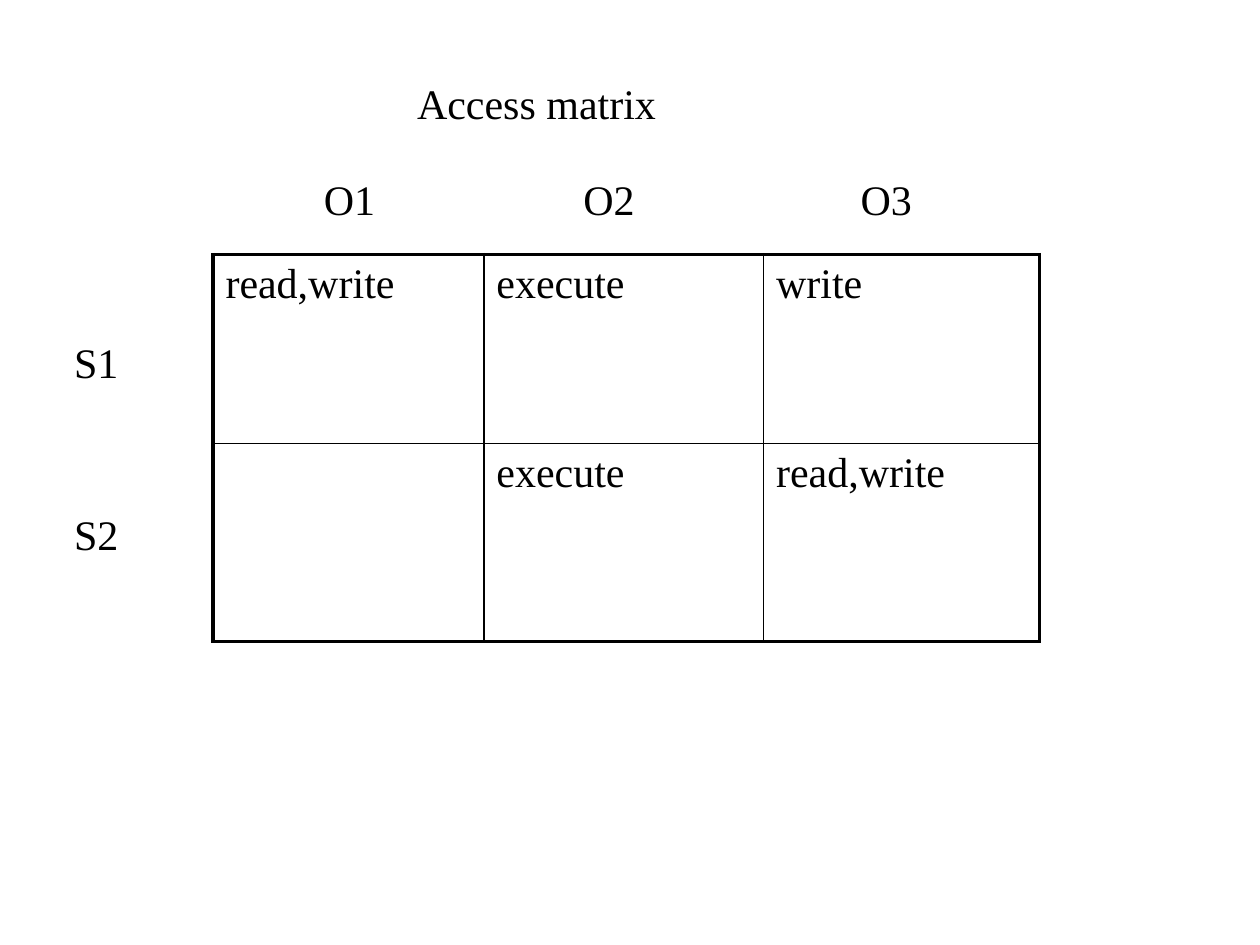
from lxml.etree import SubElement
from pptx import Presentation
from pptx.dml.color import RGBColor
from pptx.enum.text import MSO_AUTO_SIZE
from pptx.oxml.ns import qn
from pptx.util import Inches, Pt

BLACK = "000000"
FONT = {"name": "Times New Roman", "size": Pt(24), "bold": False}
FRAME = {"word_wrap": True, "auto_size": MSO_AUTO_SIZE.SHAPE_TO_FIT_TEXT}


def write_text(text_frame, text):
    paragraph = text_frame.paragraphs[0]
    paragraph.text = text
    for name, value in FONT.items():
        setattr(paragraph.font, name, value)
    paragraph.font.color.rgb = RGBColor.from_string(BLACK)


def add_border(cell, side, width):
    properties = cell._tc.get_or_add_tcPr()
    line = SubElement(properties, qn(f"a:ln{side}"), w=str(Pt(width)))
    fill = SubElement(line, qn("a:solidFill"))
    SubElement(fill, qn("a:srgbClr"), val=BLACK)


presentation = Presentation()
presentation.slide_width = Inches(10)
presentation.slide_height = Inches(7.5)
slide = presentation.slides.add_slide(presentation.slide_layouts[6])

rights = [["read,write", "execute", "write"], ["", "execute", "read,write"]]
column_widths = [2.15, 2.22, 2.19]
row_heights = [1.5, 1.57]
last_row = len(row_heights) - 1
last_column = len(column_widths) - 1

table = slide.shapes.add_table(
    len(row_heights), len(column_widths), Inches(1.69), Inches(2.02),
    Inches(sum(column_widths)), Inches(sum(row_heights)),
).table
table.first_row = False
table.horz_banding = False
for column, width in zip(table.columns, column_widths):
    column.width = Inches(width)
for row, height in zip(table.rows, row_heights):
    row.height = Inches(height)

for row_index, row_rights in enumerate(rights):
    for column_index, text in enumerate(row_rights):
        cell = table.cell(row_index, column_index)
        write_text(cell.text_frame, text)
        outer_sides = {
            "L": column_index == 0,
            "R": column_index == last_column,
            "T": row_index == 0,
            "B": row_index == last_row,
        }
        for side, outer in outer_sides.items():
            add_border(cell, side, 2.25 if outer else 1)
        cell.fill.background()

labels = [
    ("S1", 0.49, 2.62, 0.57, 0),
    ("S2", 0.49, 3.99, 0.65, 0),
    ("Access matrix", 1.91, 0.57, 6.09, 1.3),
    ("O1", 2.22, 1.33, 0.97, 0.25),
    ("O2", 3.95, 1.33, 1.6, 0.58),
    ("O3", 6.32, 1.33, 1.2, 0.41),
]
for text, left, top, width, indent in labels:
    label = slide.shapes.add_textbox(Inches(left), Inches(top), Inches(width), Inches(0.5))
    for name, value in FRAME.items():
        setattr(label.text_frame, name, value)
    label.text_frame.margin_left = Inches(0.1 + indent)
    write_text(label.text_frame, text)

presentation.save("out.pptx")
